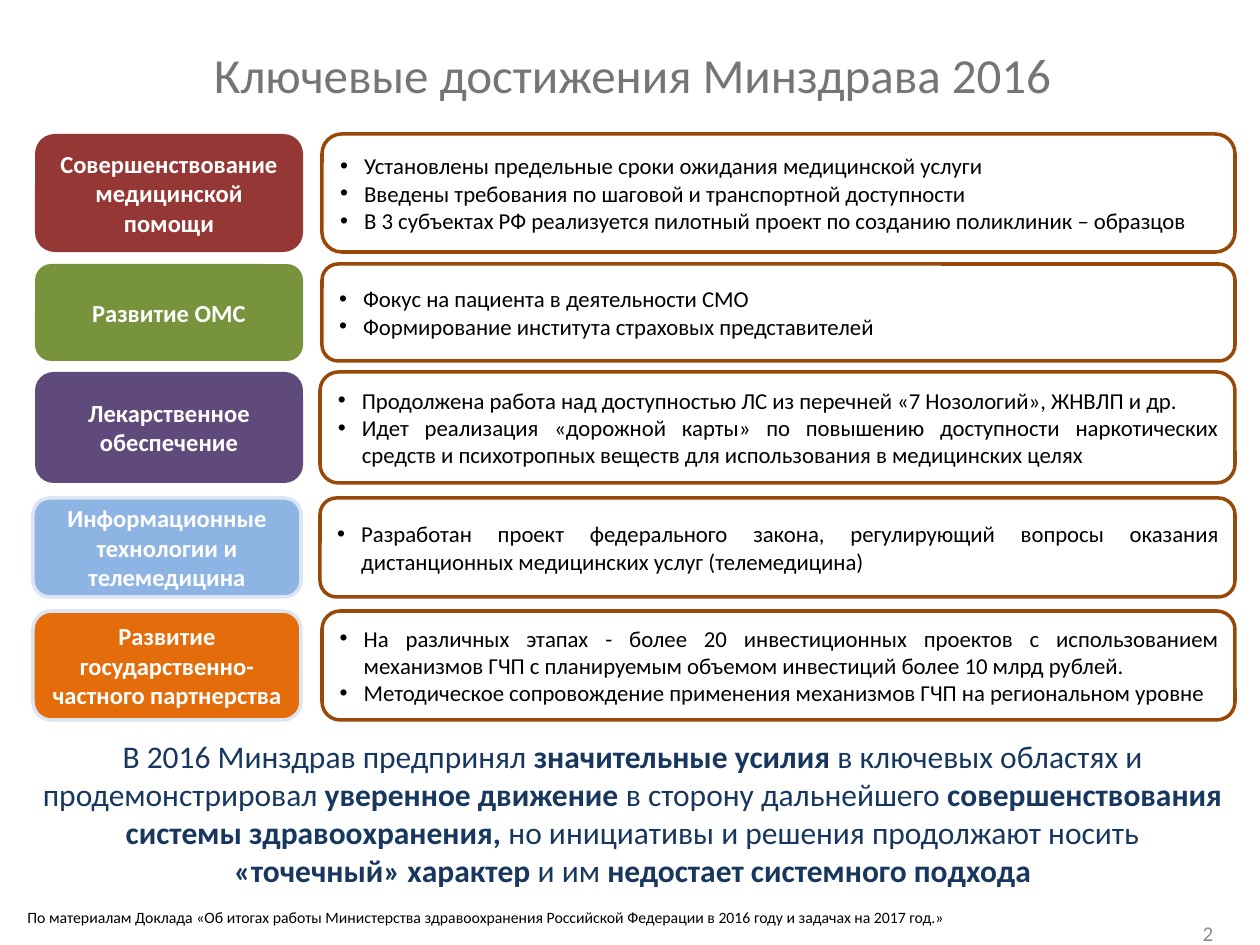
import pptx
import pptx.util
import pptx.oxml.ns
from lxml import etree
from pptx.dml.color import RGBColor
from pptx.enum.shapes import MSO_SHAPE
from pptx.enum.text import MSO_ANCHOR, PP_ALIGN

EMU_PER_PX = 914400 / 126
FONT = "Calibri"

WHITE = RGBColor(0xFF, 0xFF, 0xFF)
BLACK = RGBColor(0x00, 0x00, 0x00)
TITLE_GRAY = RGBColor(0x75, 0x75, 0x75)
NUMBER_GRAY = RGBColor(0x8C, 0x8C, 0x8C)
NAVY = RGBColor(0x17, 0x37, 0x5E)
BROWN = RGBColor(0x98, 0x48, 0x07)
PALE_BLUE = RGBColor(0xDC, 0xE6, 0xF2)
RED = RGBColor(0x95, 0x37, 0x35)
GREEN = RGBColor(0x77, 0x93, 0x3C)
PURPLE = RGBColor(0x60, 0x4A, 0x7B)
BLUE = RGBColor(0x8E, 0xB4, 0xE3)
ORANGE = RGBColor(0xE4, 0x6C, 0x0A)

LABEL_WIDTH = 268
DETAILS_RIGHT = 1235
BULLET_INDENT = 24

ACHIEVEMENTS = [
    (134, 118, 35, 322, RED, None, "Совершенствование медицинской помощи", [
        "Установлены предельные сроки ожидания медицинской услуги",
        "Введены требования по шаговой и транспортной доступности",
        "В 3 субъектах РФ реализуется пилотный проект по созданию поликлиник – образцов",
    ]),
    (264, 97, 35, 322, GREEN, None, "Развитие ОМС", [
        "Фокус на пациента в деятельности СМО",
        "Формирование института страховых представителей",
    ]),
    (372, 111, 35, 320, PURPLE, None, "Лекарственное обеспечение", [
        "Продолжена работа над доступностью ЛС из перечней «7 Нозологий», ЖНВЛП и др.",
        "Идет реализация «дорожной карты» по повышению доступности наркотических средств "
        "и психотропных веществ для использования в медицинских целях",
    ]),
    (498, 99, 33, 320, BLUE, PALE_BLUE, "Информационные технологии и телемедицина", [
        "Разработан проект федерального закона, регулирующий вопросы оказания "
        "дистанционных медицинских услуг (телемедицина)",
    ]),
    (611, 109, 33, 322, ORANGE, PALE_BLUE, "Развитие государственно-частного партнерства", [
        "На различных этапах - более 20 инвестиционных проектов с использованием "
        "механизмов ГЧП с планируемым объемом инвестиций более 10 млрд рублей.",
        "Методическое сопровождение применения механизмов ГЧП на региональном уровне",
    ]),
]

CONCLUSION = [
    ("В 2016 Минздрав предпринял ", False),
    ("значительные усилия ", True),
    ("в ключевых областях и продемонстрировал ", False),
    ("уверенное движение ", True),
    ("в сторону дальнейшего ", False),
    ("совершенствования системы здравоохранения, ", True),
    ("но инициативы и решения продолжают носить ", False),
    ("«точечный» характер ", True),
    ("и им ", False),
    ("недостает системного подхода", True),
]

SOURCE = ("По материалам Доклада «Об итогах работы Министерства здравоохранения "
          "Российской Федерации в 2016 году и задачах на 2017 год.»")


def px(length):
    return pptx.util.Emu(round(length * EMU_PER_PX))


def add_span(para, text, size, color, bold=False):
    span = para.add_run()
    span.text = text
    span.font.name = FONT
    span.font.size = pptx.util.Pt(size)
    span.font.bold = bold
    span.font.color.rgb = color


def add_bullet(para):
    properties = para._p.get_or_add_pPr()
    properties.set("marL", str(px(BULLET_INDENT)))
    properties.set("indent", str(-px(BULLET_INDENT)))
    font = etree.SubElement(properties, pptx.oxml.ns.qn("a:buFont"))
    font.set("typeface", "Arial")
    bullet = etree.SubElement(properties, pptx.oxml.ns.qn("a:buChar"))
    bullet.set("char", "•")


def add_text(page, left, top, width, height, spans, size, color,
             align=PP_ALIGN.CENTER, anchor=MSO_ANCHOR.MIDDLE):
    box = page.shapes.add_textbox(px(left), px(top), px(width), px(height))
    box.text_frame.word_wrap = True
    box.text_frame.vertical_anchor = anchor
    para = box.text_frame.paragraphs[0]
    para.alignment = align
    for text, bold in spans:
        add_span(para, text, size, color, bold)
    return para


def add_card(page, left, top, width, height, fill, outline):
    card = page.shapes.add_shape(MSO_SHAPE.ROUNDED_RECTANGLE,
                                 px(left), px(top), px(width), px(height))
    card.shadow.inherit = False
    card.fill.solid()
    card.fill.fore_color.rgb = fill
    if outline is None:
        card.line.fill.background()
    else:
        card.line.color.rgb = outline
        card.line.width = pptx.util.Pt(2)
    card.text_frame.word_wrap = True
    card.text_frame.vertical_anchor = MSO_ANCHOR.MIDDLE
    return card.text_frame


def add_label(page, left, top, height, fill, outline, text):
    frame = add_card(page, left, top, LABEL_WIDTH, height, fill, outline)
    para = frame.paragraphs[0]
    para.alignment = PP_ALIGN.CENTER
    add_span(para, text, 14, WHITE, True)


def add_details(page, left, top, height, items):
    frame = add_card(page, left, top, DETAILS_RIGHT - left, height, WHITE, BROWN)
    for index, item in enumerate(items):
        para = frame.add_paragraph() if index else frame.paragraphs[0]
        para.alignment = PP_ALIGN.JUSTIFY
        add_bullet(para)
        add_span(para, item, 13, BLACK)


def main():
    deck = pptx.Presentation()
    deck.slide_width = px(1260)
    deck.slide_height = px(945)
    page = deck.slides.add_slide(deck.slide_layouts[6])

    add_text(page, 64, 26, 1137, 96,
             [("Ключевые достижения Минздрава 2016", False)], 28, TITLE_GRAY)
    add_text(page, 1176, 908, 64, 50, [("2", False)], 12, NUMBER_GRAY)

    for top, height, label_left, details_left, fill, outline, label, items in ACHIEVEMENTS:
        add_label(page, label_left, top, height, fill, outline, label)
        add_details(page, details_left, top, height, items)

    conclusion = add_text(page, 30, 731, 1205, 165, CONCLUSION, 18, NAVY,
                          anchor=MSO_ANCHOR.TOP)
    conclusion.space_before = pptx.util.Pt(12)
    add_text(page, 15, 902, 1142, 32, [(SOURCE, False)], 9, BLACK,
             PP_ALIGN.LEFT, MSO_ANCHOR.TOP)

    deck.save("out.pptx")


if __name__ == "__main__":
    main()
